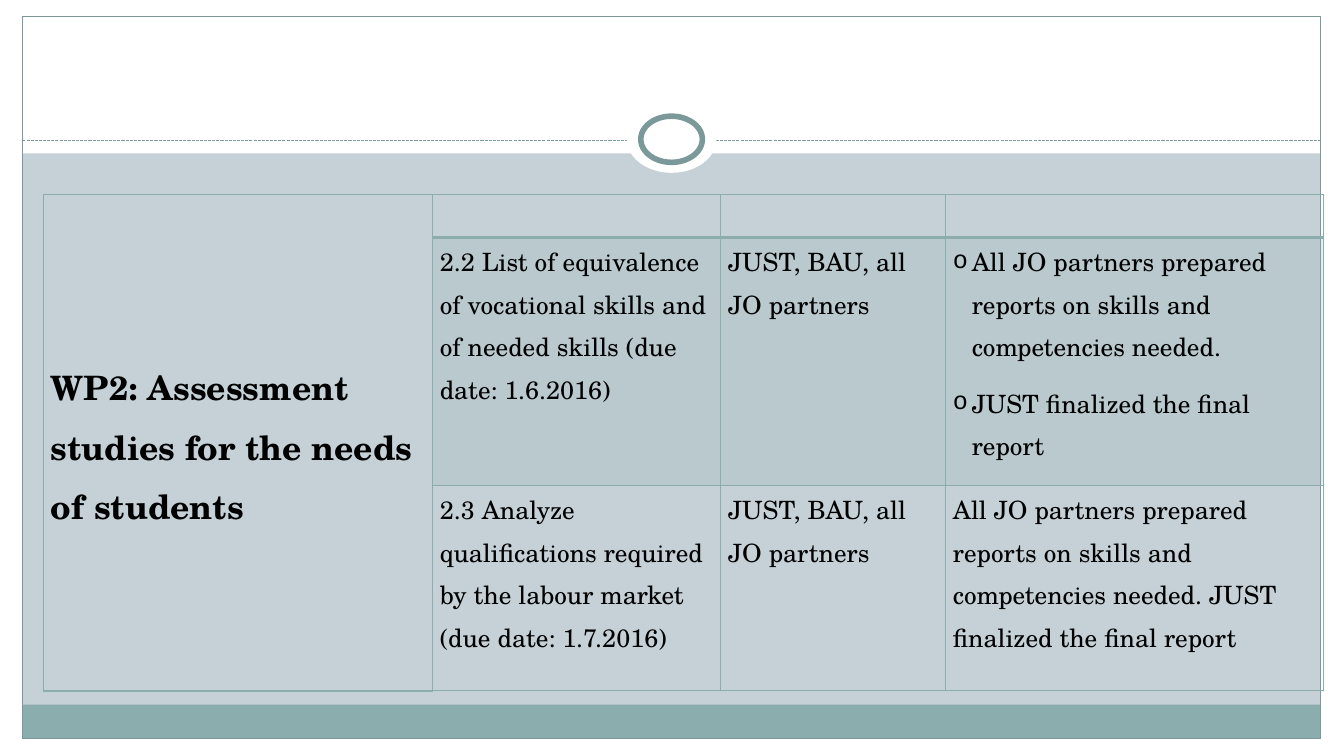
from lxml import etree
from pptx import Presentation
from pptx.dml.color import RGBColor
from pptx.enum.dml import MSO_LINE
from pptx.enum.shapes import MSO_CONNECTOR, MSO_SHAPE
from pptx.enum.text import MSO_ANCHOR
from pptx.oxml.ns import qn
from pptx.util import Pt

RECT, OVAL = MSO_SHAPE.RECTANGLE, MSO_SHAPE.OVAL
LINE, DASH = MSO_CONNECTOR.STRAIGHT, MSO_LINE.SQUARE_DOT
TOP, MIDDLE = MSO_ANCHOR.TOP, MSO_ANCHOR.MIDDLE
FONT = "TeX Gyre Schola"
HUES = {"back": "C5D1D7", "white": "FFFFFF", "teal": "8CADAE",
        "edge": "7C999A", "ink": "000000"}
WIDE, HIGH = 960, 540
COLS = (277.75, 206, 160.5, 270)
ROWS = (30.75, 177, 146.75)
TITLE = "WP2: Assessment studies for the needs of students"
TEAM = "JUST, BAU, all JO partners"
TASKS = (
    (("2.2 List of equivalence of vocational skills and of needed skills "
      "(due date: 1.6.2016)",),
     (TEAM,),
     ("All JO partners prepared reports on skills and competencies needed.",
      "JUST finalized the final report")),
    (("2.3 Analyze qualifications required by the labour market "
      "(due date: 1.7.2016)",),
     (TEAM,),
     ("All JO partners prepared reports on skills and competencies needed. "
      "JUST finalized the final report",)),
)


def hue(name):
    """Return a named colour."""
    return RGBColor.from_string(HUES[name])


def add_part(slide, kind, box, fill=None, edge=0):
    """Add a plain shape with an optional fill and outline."""
    part = slide.shapes.add_shape(kind, *map(Pt, box))
    part.shadow.inherit = False
    if fill:
        part.fill.solid()
        part.fill.fore_color.rgb = hue(fill)
    else:
        part.fill.background()
    if edge:
        part.line.color.rgb = hue("edge")
        part.line.width = Pt(edge)
    else:
        part.line.fill.background()


def add_ring(slide, mid, y, wide, high, edge=0):
    """Add a white oval centred on a point."""
    box = (mid - wide / 2, y - high / 2, wide, high)
    add_part(slide, OVAL, box, "white", edge)


def add_frame(slide, box):
    """Draw the white margins, foot band, outline and ring."""
    x, y, wide, high = box
    end, foot = x + wide, y + high
    for side in ((0, foot, WIDE, HIGH - foot), (0, 0, WIDE, 109.5),
                 (0, 0, x, HIGH), (end, 0, WIDE - end, HIGH)):
        add_part(slide, RECT, side, "white")
    add_part(slide, RECT, (x, foot - 24.5, wide, 24.5), "teal")
    add_part(slide, RECT, box, edge=0.75)
    rule = slide.shapes.add_connector(
        LINE, Pt(x), Pt(y + 88.5), Pt(end), Pt(y + 88.5))
    rule.line.color.rgb = hue("edge")
    rule.line.width = Pt(0.75)
    rule.line.dash_style = DASH
    etree.SubElement(rule._element.spPr, qn("a:effectLst"))
    add_ring(slide, x + wide / 2, y + 87.5, 64, 48)
    add_ring(slide, x + wide / 2, y + 87.5, 44, 33, 4)


def set_edges(cell, base):
    """Give a cell thin teal borders and a base border of a set width."""
    props = cell._tc.get_or_add_tcPr()
    for spot, side in enumerate("LRTB"):
        size = base if side == "B" else 1
        line = etree.Element(qn("a:ln" + side), w=str(Pt(size)))
        fill = etree.SubElement(line, qn("a:solidFill"))
        etree.SubElement(fill, qn("a:srgbClr"), val=HUES["teal"])
        props.insert(spot, line)


def set_cell(cell, base, tint):
    """Set the margins, fill and borders of a cell."""
    cell.margin_left = cell.margin_right = Pt(5.4)
    cell.margin_top = cell.margin_bottom = 0
    if tint:
        cell.fill.solid()
        cell.fill.fore_color.rgb = hue("teal")
        tone = cell._tc.tcPr.find(".//" + qn("a:srgbClr"))
        etree.SubElement(tone, qn("a:alpha"), val="20000")
    else:
        cell.fill.background()
    set_edges(cell, base)


def add_mark(para):
    """Turn a paragraph into a hanging bullet."""
    props = para._p.get_or_add_pPr()
    props.set("marL", str(Pt(13.5)))
    props.set("indent", str(-Pt(13.5)))
    etree.SubElement(props, qn("a:buFont"), typeface="Courier New")
    etree.SubElement(props, qn("a:buChar"), char="o")


def add_text(cell, lines, size=18, bold=False, after=0):
    """Write paragraphs in a cell, with bullets when there are several."""
    frame = cell.text_frame
    for num, words in enumerate(lines):
        para = frame.add_paragraph() if num else frame.paragraphs[0]
        para.line_spacing = 1.15
        para.space_after = Pt(after)
        if len(lines) > 1:
            add_mark(para)
        run = para.add_run()
        run.text = words
        run.font.name = FONT
        run.font.size = Pt(size)
        run.font.bold = bold
        run.font.color.rgb = hue("ink")


def add_plan(slide, x, y):
    """Place the work package table."""
    shape = slide.shapes.add_table(
        len(ROWS), len(COLS), Pt(x), Pt(y), Pt(sum(COLS)), Pt(sum(ROWS)))
    table = shape.table
    table.first_row = table.horz_banding = False
    for col, wide in zip(table.columns, COLS):
        col.width = Pt(wide)
    for row, high in zip(table.rows, ROWS):
        row.height = Pt(high)
    for r in range(len(ROWS)):
        for c in range(len(COLS)):
            base = 2 if r == 0 or c == 0 else 1
            set_cell(table.cell(r, c), base, r == 1 and c > 0)
    head = table.cell(0, 0)
    head.merge(table.cell(len(ROWS) - 1, 0))
    head.vertical_anchor = MIDDLE
    add_text(head, (TITLE,), 24, True)
    for r, task in enumerate(TASKS, 1):
        for c, lines in enumerate(task, 1):
            cell = table.cell(r, c)
            cell.vertical_anchor = TOP
            add_text(cell, lines, after=10 if c > 1 else 0)


def main():
    """Build and save the slide."""
    deck = Presentation()
    deck.slide_width, deck.slide_height = Pt(WIDE), Pt(HIGH)
    slide = deck.slides.add_slide(deck.slide_layouts[6])
    slide.background.fill.solid()
    slide.background.fill.fore_color.rgb = hue("back")
    add_frame(slide, (16, 12, 927.5, 515.75))
    add_plan(slide, 31, 139)
    deck.save("out.pptx")


if __name__ == "__main__":
    main()
